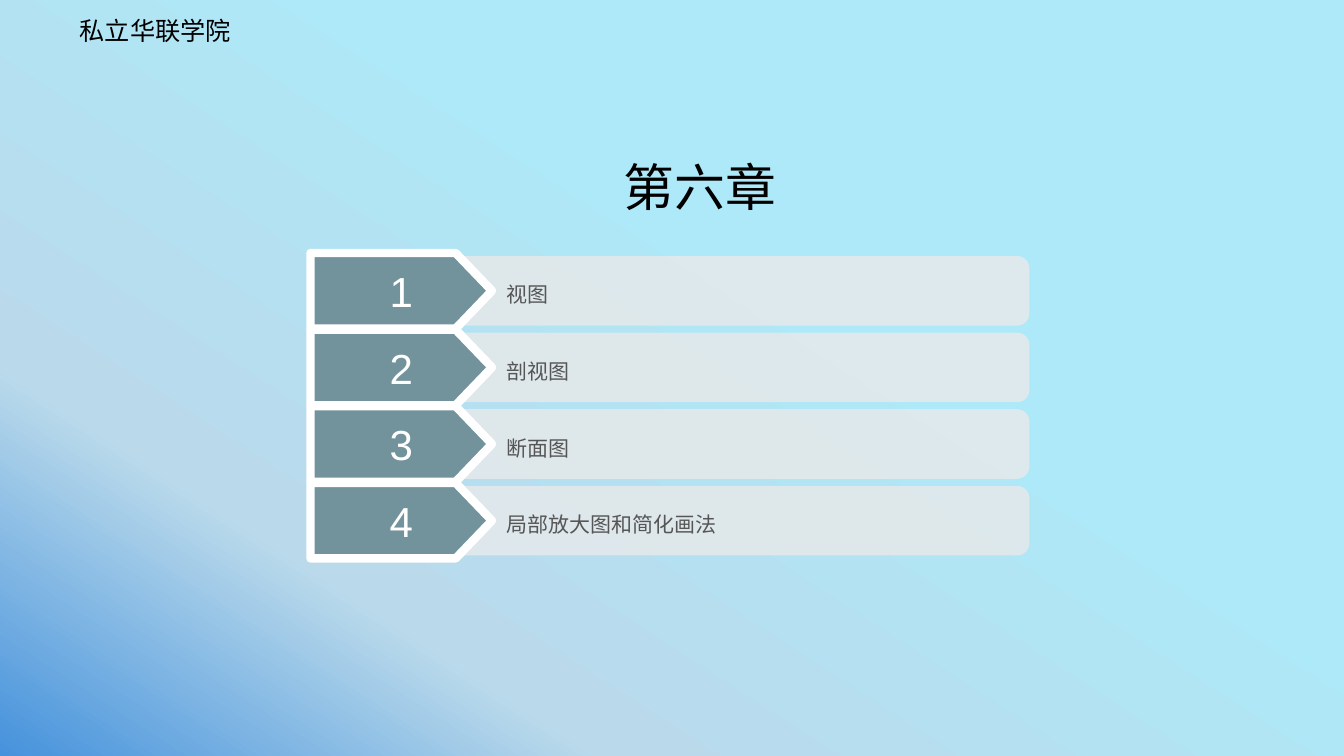
from dataclasses import dataclass
from math import cos, pi, sin
from typing import Any

from lxml import etree
from pptx import Presentation, util as u
from pptx.dml.color import RGBColor
from pptx.enum import text
from pptx.oxml import ns

BLACK = RGBColor(0x00, 0x00, 0x00)
WHITE = RGBColor(0xFF, 0xFF, 0xFF)
SLATE = RGBColor(0x72, 0x93, 0x9C)
MIST = RGBColor(0xE3, 0xE9, 0xEB)
GRAPHITE = RGBColor(0x56, 0x56, 0x56)
DEEP_BLUE = RGBColor(0x46, 0x92, 0xDC)
PALE_BLUE = RGBColor(0xBA, 0xDA, 0xEB)
CYAN = RGBColor(0xAD, 0xE9, 0xF8)

SKY_STOPS = ((0, DEEP_BLUE), (24, PALE_BLUE), (62, CYAN))
SKY_ANGLE = 303

SECTIONS = ("视图", "剖视图", "断面图", "局部放大图和简化画法")
ROW_TOP, ROW_PITCH = 2.51, 0.76
BAR_LEFT, BAR_RIGHT, BAR_DROP, BAR_HEIGHT = 4.55, 10.21, 0.03, 0.69
CORNER, CORNER_STEPS = 0.12, 8
TAG_LEFT, TAG_SHOULDER, TAG_TIP, TAG_HEIGHT = 3.08, 4.52, 4.88, 0.75

Point = tuple[float, float]


@dataclass(frozen=True)
class Wording:
    words: str
    size: float
    color: RGBColor
    font: str = "Arial"
    align: text.PP_ALIGN = text.PP_ALIGN.LEFT
    spacing: float = 1.0


@dataclass(frozen=True)
class Label:
    left: float
    top: float
    width: float
    height: float
    wording: Wording
    frame: dict[str, Any]


def apply(target: Any, values: dict[str, Any]) -> None:
    for key, value in values.items():
        setattr(target, key, value)


def margins(left: float, top: float, right: float, bottom: float) -> dict[str, Any]:
    return {
        "margin_left": u.Inches(left),
        "margin_top": u.Inches(top),
        "margin_right": u.Inches(right),
        "margin_bottom": u.Inches(bottom),
    }


def write(shape: Any, wording: Wording, frame: dict[str, Any]) -> None:
    apply(shape.text_frame, {"word_wrap": True, **frame})
    paragraph = shape.text_frame.paragraphs[0]
    apply(paragraph, {"alignment": wording.align, "line_spacing": wording.spacing})
    run = paragraph.add_run()
    run.text = wording.words
    apply(run.font, {"size": u.Pt(wording.size), "name": wording.font})
    run.font.color.rgb = wording.color


def paint_sky(slide: Any) -> None:
    fill = slide.background.fill
    fill.gradient()
    fill.gradient_angle = 360 - SKY_ANGLE
    stops = slide.background._cSld.find(".//" + ns.qn("a:gsLst"))
    for stop in list(stops):
        stops.remove(stop)
    for percent, color in SKY_STOPS:
        stop = etree.SubElement(stops, ns.qn("a:gs"), pos=str(percent * 1000))
        etree.SubElement(stop, ns.qn("a:srgbClr"), val=str(color))


def add_label(slide: Any, label: Label) -> None:
    box = slide.shapes.add_textbox(
        *map(u.Inches, (label.left, label.top, label.width, label.height))
    )
    write(box, label.wording, label.frame)


def add_outline(slide: Any, points: list[Point], color: RGBColor) -> Any:
    corners = [(u.Inches(x), u.Inches(y)) for x, y in points]
    builder = slide.shapes.build_freeform(*corners[0])
    builder.add_line_segments(corners[1:], close=True)
    outline = builder.convert_to_shape()
    outline.shadow.inherit = False
    outline.fill.solid()
    outline.fill.fore_color.rgb = color
    return outline


def corner_arc(x: float, y: float, start: float) -> list[Point]:
    angles = [start + pi / 2 * step / CORNER_STEPS for step in range(CORNER_STEPS + 1)]
    return [(x + CORNER * cos(angle), y + CORNER * sin(angle)) for angle in angles]


def add_bar(slide: Any, top: float, words: str) -> None:
    bottom, arc_x = top + BAR_HEIGHT, BAR_RIGHT - CORNER
    points = [
        (BAR_LEFT, top),
        *corner_arc(arc_x, top + CORNER, -pi / 2),
        *corner_arc(arc_x, bottom - CORNER, 0),
        (BAR_LEFT, bottom),
    ]
    bar = add_outline(slide, points, MIST)
    bar.line.fill.background()
    tint = bar._element.spPr.find(".//" + ns.qn("a:srgbClr"))
    etree.SubElement(tint, ns.qn("a:alpha"), val="90000")
    write(
        bar,
        Wording(words, 15, GRAPHITE, spacing=1.3),
        {"vertical_anchor": text.MSO_ANCHOR.MIDDLE, **margins(0.47, 0, 0, 0)},
    )


def add_tag(slide: Any, top: float, number: int) -> None:
    bottom = top + TAG_HEIGHT
    points = [
        (TAG_LEFT, top),
        (TAG_SHOULDER, top),
        (TAG_TIP, top + TAG_HEIGHT / 2),
        (TAG_SHOULDER, bottom),
        (TAG_LEFT, bottom),
    ]
    tag = add_outline(slide, points, SLATE)
    tag.line.color.rgb = WHITE
    tag.line.width = u.Pt(6)
    write(
        tag,
        Wording(str(number), 30, WHITE, align=text.PP_ALIGN.CENTER),
        {"vertical_anchor": text.MSO_ANCHOR.MIDDLE},
    )


def main() -> None:
    deck = Presentation()
    apply(deck, {"slide_width": u.Inches(13.33), "slide_height": u.Inches(7.5)})
    slide = deck.slides.add_slide(deck.slide_layouts[6])
    paint_sky(slide)

    school = Wording("私立华联学院", 18, BLACK, font="Noto Sans CJK JP")
    chapter = Wording(
        "第六章", 36.3, BLACK, align=text.PP_ALIGN.CENTER, spacing=0.7
    )
    add_label(
        slide, Label(0.74, 0.1, 2.94, 0.4, school, margins(0.05, 0.05, 0.05, 0.05))
    )
    for index, section in enumerate(SECTIONS):
        top = ROW_TOP + index * ROW_PITCH
        add_bar(slide, top + BAR_DROP, section)
        add_tag(slide, top, index + 1)
    add_label(slide, Label(3.99, 1.66, 5.91, 0.57, chapter, {}))

    deck.save("out.pptx")


if __name__ == "__main__":
    main()
